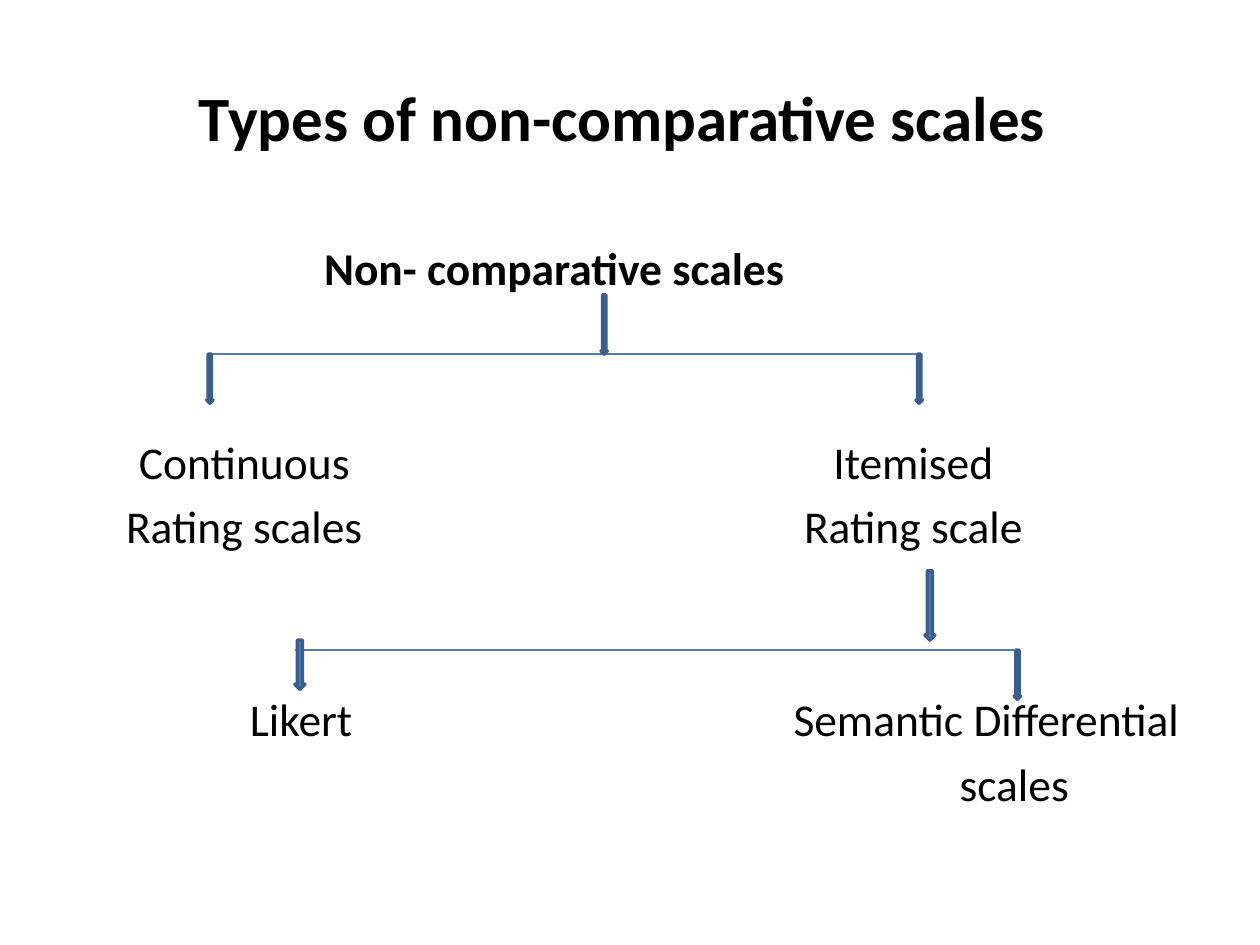
"""Build a slide that shows the types of non-comparative scales as a tree."""
import dataclasses

import lxml.etree
import pptx
import pptx.dml.color
import pptx.enum.shapes
import pptx.enum.text
import pptx.oxml.ns
import pptx.util


@dataclasses.dataclass(frozen=True)
class Theme:
    """Colours, type sizes and line widths."""
    font: str = "Calibri"
    ink: str = "000000"
    fill: str = "4F81BD"
    edge: str = "3A5F8C"
    rule: str = "4B7EBC"
    title: float = 36
    body: float = 26
    gap: float = 5.2
    thick: float = 2
    thin: float = 0.75


THEME = Theme()
WIDE, HIGH = 10, 7.5
COLS, ROWS = 100, 75
TOP, PITCH = 19, 5.12


def across(cols):
    """Turn grid columns into a length."""
    return pptx.util.Inches(round(cols * WIDE / COLS, 2))


def down(rows):
    """Turn grid rows into a length."""
    return pptx.util.Inches(round(rows * HIGH / ROWS, 2))


def tint(code):
    """Turn a hex code into a colour."""
    return pptx.dml.color.RGBColor.from_string(code)


def add_text(slide, lines, mid, top, width, height, size, bold=False):
    """Add centred lines around the column mid."""
    box = slide.shapes.add_textbox(
        across(mid - width / 2), down(top), across(width), down(height))
    frame = box.text_frame
    frame.word_wrap = True
    frame.margin_left = frame.margin_right = 0
    frame.margin_top = frame.margin_bottom = 0
    frame.vertical_anchor = pptx.enum.text.MSO_ANCHOR.MIDDLE
    frame.text = "\n".join(lines)
    for index, para in enumerate(frame.paragraphs):
        para.alignment = pptx.enum.text.PP_ALIGN.CENTER
        para.space_before = pptx.util.Pt(THEME.gap if index else 0)
        font = para.font
        font.name, font.size, font.bold = THEME.font, pptx.util.Pt(size), bold
        font.color.rgb = tint(THEME.ink)


def add_label(slide, lines, mid, line, width, bold=False):
    """Add a tree label that starts on a text line."""
    add_text(slide, lines, mid, TOP + line * PITCH, width,
             len(lines) * PITCH - 0.72, THEME.body, bold)


def add_arrow(slide, left, top, width, height):
    """Add a slim down arrow."""
    arrow = slide.shapes.add_shape(
        pptx.enum.shapes.MSO_SHAPE.DOWN_ARROW,
        across(left), down(top), across(width), down(height))
    arrow.shadow.inherit = False
    arrow.fill.solid()
    arrow.fill.fore_color.rgb = tint(THEME.fill)
    arrow.line.color.rgb = tint(THEME.edge)
    arrow.line.width = pptx.util.Pt(THEME.thick)


def add_branch(slide, left, right, row):
    """Add a level line between two branches."""
    line = slide.shapes.add_connector(
        pptx.enum.shapes.MSO_CONNECTOR.STRAIGHT,
        across(left), down(row), across(right), down(row))
    line.line.color.rgb = tint(THEME.rule)
    line.line.width = pptx.util.Pt(THEME.thin)
    lxml.etree.SubElement(
        line._element.spPr, pptx.oxml.ns.qn("a:effectLst"))


def main():
    """Build and save the slide."""
    deck = pptx.Presentation()
    deck.slide_width, deck.slide_height = across(COLS), down(ROWS)
    slide = deck.slides.add_slide(deck.slide_layouts[6])

    add_text(slide, ["Types of non-comparative scales"],
             49.4, 3, 88, 12.5, THEME.title, True)
    add_label(slide, ["Non- comparative scales"], 44, 0, 44, True)
    add_label(slide, ["Continuous", "Rating scales"], 19.4, 3, 26)
    add_label(slide, ["Itemised", "Rating scale"], 72.5, 3, 26)
    add_label(slide, ["Likert"], 23.9, 7, 16)
    add_label(slide, ["Semantic Differential"], 78.3, 7, 38)
    add_label(slide, ["scales"], 80.5, 8, 16)

    add_branch(slide, 16.4, 72.7, 28.1)
    add_branch(slide, 23.4, 80.5, 51.6)
    for spot in (
        (47.7, 23.4, 0.5, 4.7),
        (16.4, 28.1, 0.5, 3.9),
        (72.7, 28.1, 0.5, 3.9),
        (73.4, 45.3, 0.8, 5.5),
        (23.4, 50.8, 0.8, 3.9),
        (80.5, 51.6, 0.5, 3.9),
    ):
        add_arrow(slide, *spot)
    deck.save("out.pptx")


if __name__ == "__main__":
    main()
